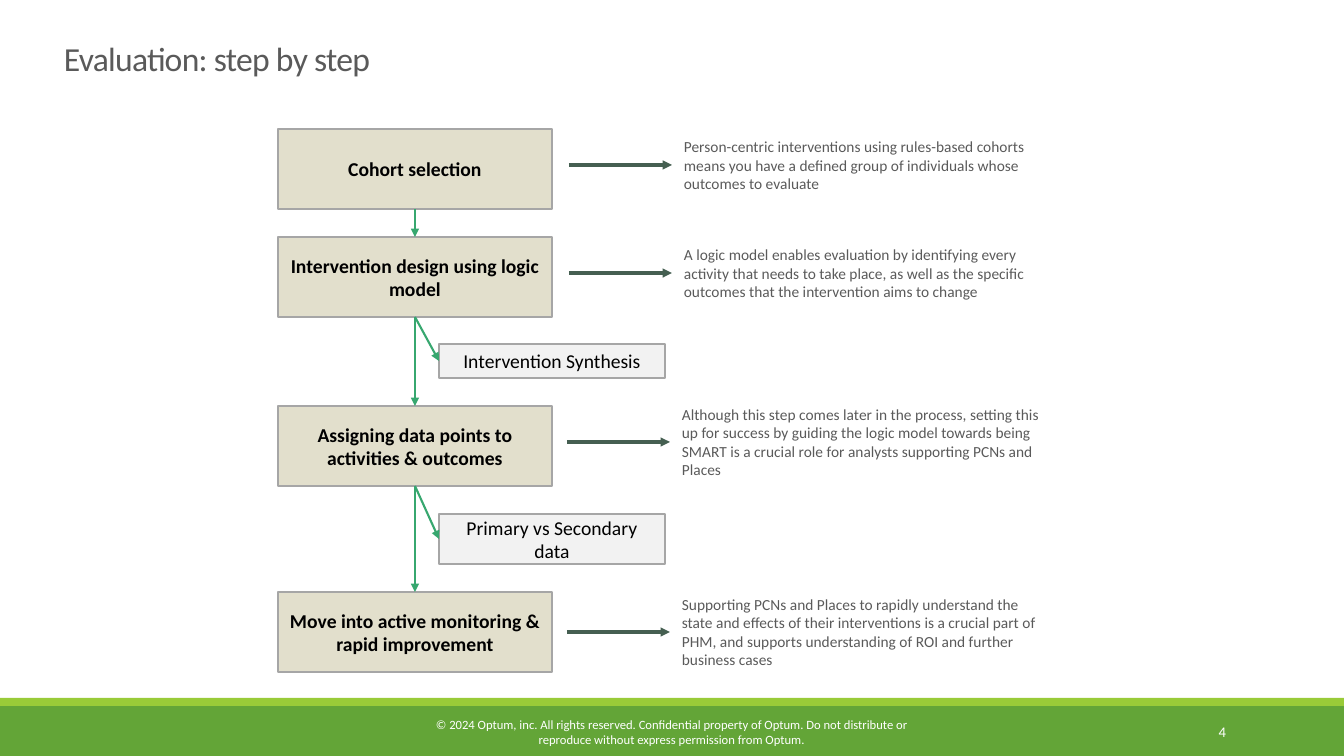
from dataclasses import dataclass

from lxml.etree import SubElement
from pptx import Presentation
from pptx.dml.color import RGBColor
from pptx.enum.shapes import MSO_CONNECTOR as Connector, MSO_SHAPE as Preset
from pptx.enum.text import MSO_ANCHOR as Anchor, PP_ALIGN as Align
from pptx.oxml.ns import qn
from pptx.util import Emu, Pt

EMU_PER_PX = 914400 / 100.8
BOTTOM, LEFT, TOP = 2, 1, 0


@dataclass(frozen=True)
class Theme:
    font: str = "Calibri"
    text: str = "5A5A5A"
    black: str = "000000"
    white: str = "FFFFFF"
    step_fill: str = "E2DFCC"
    detail_fill: str = "F2F2F2"
    border: str = "A6A6A6"
    flow: str = "37A76F"
    note_arrow: str = "455F51"
    footer: str = "63A537"
    footer_edge: str = "99CB38"
    title_size: float = 24
    box_size: float = 14
    note_size: float = 11
    number_size: float = 10.5
    copyright_size: float = 9


THEME = Theme()

STEPS = [
    (129, "Cohort selection", 674,
     "Person-centric interventions using rules-based cohorts means you have a "
     "defined group of individuals whose outcomes to evaluate"),
    (237, "Intervention design using logic model", 674,
     "A logic model enables evaluation by identifying every activity that needs "
     "to take place, as well as the specific outcomes that the intervention aims to change"),
    (406, "Assigning data points to activities & outcomes", 672,
     "Although this step comes later in the process, setting this up for success by "
     "guiding the logic model towards being SMART is a crucial role for analysts "
     "supporting PCNs and Places"),
    (592, "Move into active monitoring & rapid improvement", 672,
     "Supporting PCNs and Places to rapidly understand the state and effects of their "
     "interventions is a crucial part of PHM, and supports understanding of ROI and "
     "further business cases"),
]
DETAILS = [
    (1, 344, 34, "Intervention Synthesis"),
    (2, 514, 50, "Primary vs Secondary data"),
]
COPYRIGHT = ("© 2024 Optum, inc. All rights reserved. Confidential property of Optum. "
             "Do not distribute or reproduce without express permission from Optum.")


def px(*lengths):
    return [Emu(round(length * EMU_PER_PX)) for length in lengths]


def color(value):
    return RGBColor.from_string(value)


def write(shape, text, size, ink, align=Align.LEFT, bold=False):
    frame = shape.text_frame
    frame.word_wrap = True
    frame.vertical_anchor = Anchor.MIDDLE
    frame.text = text
    paragraph = frame.paragraphs[0]
    paragraph.alignment = align
    for run in paragraph.runs:
        run.font.name = THEME.font
        run.font.size = Pt(size)
        run.font.bold = bold
        run.font.color.rgb = color(ink)
    return paragraph


def add_text(slide, place, text, size, ink, align=Align.LEFT):
    return write(slide.shapes.add_textbox(*px(*place)), text, size, ink, align)


def add_rectangle(slide, place, fill):
    shape = slide.shapes.add_shape(Preset.RECTANGLE, *px(*place))
    shape.shadow.inherit = False
    shape.fill.solid()
    shape.fill.fore_color.rgb = color(fill)
    shape.line.fill.background()
    return shape


def add_box(slide, place, text, fill, bold=False):
    shape = add_rectangle(slide, place, fill)
    shape.line.color.rgb = color(THEME.border)
    shape.line.width = Pt(1.25)
    write(shape, text, THEME.box_size, THEME.black, Align.CENTER, bold)
    return shape


def add_arrow(slide, ends, ink, width):
    arrow = slide.shapes.add_connector(Connector.STRAIGHT, *px(*ends))
    arrow.line.color.rgb = color(ink)
    arrow.line.width = Pt(width)
    SubElement(arrow.line._get_or_add_ln(), qn("a:tailEnd"), type="triangle")
    SubElement(arrow._element.spPr, qn("a:effectLst"))
    return arrow


def join(slide, source, target, side):
    arrow = add_arrow(slide, (0, 0, 0, 0), THEME.flow, 1.5)
    arrow.begin_connect(source, BOTTOM)
    arrow.end_connect(target, side)


def add_note(slide, left, top, text):
    add_text(slide, (left, top, 384, 80), text, THEME.note_size, THEME.text)
    middle = top + 40
    add_arrow(slide, (left - 105, middle, left - 2, middle), THEME.note_arrow, 2.25)


def add_footer(slide):
    add_rectangle(slide, (0, 706, 1344, 50), THEME.footer)
    add_rectangle(slide, (0, 698, 1344, 8), THEME.footer_edge)
    add_text(slide, (1092, 712, 144, 40), "4", THEME.number_size, THEME.white, Align.RIGHT)
    add_text(slide, (406, 712, 531, 40), COPYRIGHT, THEME.copyright_size,
             THEME.white, Align.CENTER)


def add_title(slide, text):
    paragraph = add_text(slide, (54, 22, 1109, 78), text, THEME.title_size, THEME.text)
    paragraph.line_spacing = 0.85
    for run in paragraph.runs:
        run.font._element.set("spc", "-50")


def main():
    presentation = Presentation()
    presentation.slide_width, presentation.slide_height = px(1344, 756)
    slide = presentation.slides.add_slide(presentation.slide_layouts[6])
    add_footer(slide)
    add_title(slide, "Evaluation: step by step")

    steps = [add_box(slide, (278, top, 274, 80), label, THEME.step_fill, bold=True)
             for top, label, _, _ in STEPS]
    for source, target in zip(steps, steps[1:]):
        join(slide, source, target, TOP)
    for index, top, height, label in DETAILS:
        detail = add_box(slide, (439, top, 226, height), label, THEME.detail_fill)
        join(slide, steps[index], detail, LEFT)
    for top, _, note_left, note in STEPS:
        add_note(slide, note_left, top - 4 if top < 592 else top, note)

    presentation.save("out.pptx")


if __name__ == "__main__":
    main()
